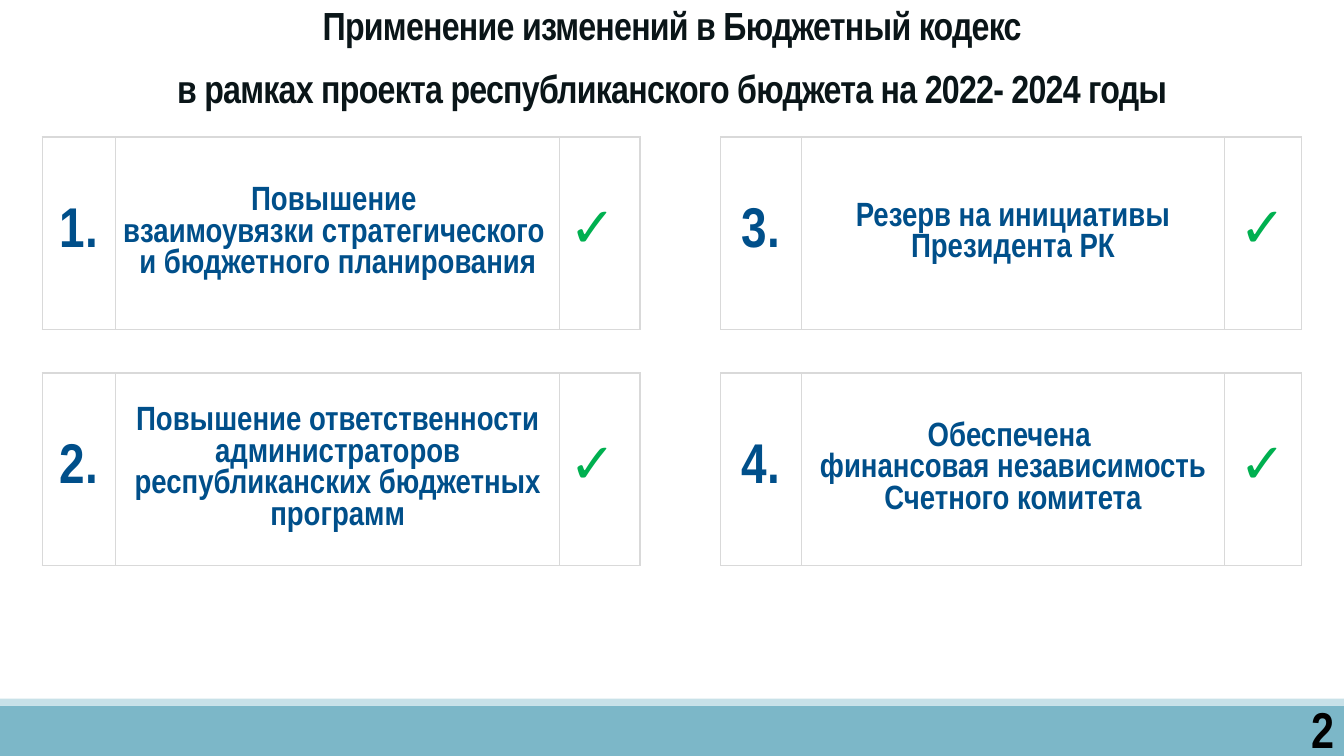
from dataclasses import dataclass

from lxml import etree
from pptx import Presentation
from pptx.dml.color import RGBColor
from pptx.enum import shapes, text
from pptx.oxml import ns
from pptx.util import Pt


@dataclass(frozen=True)
class Theme:
    """Colours, font and type sizes of the slide."""
    font: str = "Arial Narrow"
    title: str = "0A1518"
    body: str = "004F8A"
    check: str = "00B050"
    page_number: str = "000000"
    border: str = "D9D9D9"
    footer: str = "7CB7C8"
    stripe: str = "C8E1E8"
    title_size: int = 28
    body_size: int = 24
    number_size: int = 40
    check_size: int = 40
    page_size: int = 36


THEME = Theme()
WIDTH, HEIGHT = 960, 540
COLUMNS = (52.6, 316.8, 57.6, 57.6, 57.6, 302.4, 54.7)
ROWS = (137.5, 31, 137.5)
GAP_ROW, GAP_COLUMN = 1, 3
TITLE = (
    "Применение изменений в Бюджетный кодекс",
    "в рамках проекта республиканского бюджета на 2022- 2024 годы",
)
CARDS = (
    (0, 0, "1.", ("Повышение ", "взаимоувязки стратегического ",
                  "и бюджетного планирования")),
    (2, 0, "2.", ("Повышение ответственности администраторов "
                  "республиканских бюджетных программ",)),
    (0, 4, "3.", ("Резерв на инициативы Президента РК",)),
    (2, 4, "4.", ("Обеспечена ", "финансовая независимость Счетного комитета")),
)


def write(frame, lines, size, color, bold=True, align=text.PP_ALIGN.CENTER):
    """Fill a text frame with one formatted paragraph per line."""
    frame.word_wrap = True
    for index, line in enumerate(lines):
        para = frame.add_paragraph() if index else frame.paragraphs[0]
        para.alignment = align
        span = para.add_run()
        span.text = line
        span.font.name = THEME.font
        span.font.size = Pt(size)
        span.font.bold = bold
        span.font.color.rgb = RGBColor.from_string(color)


def add_band(page, top, height, color):
    """Draw a full-width band without an outline."""
    band = page.shapes.add_shape(
        shapes.MSO_SHAPE.RECTANGLE, 0, Pt(top), Pt(WIDTH), Pt(height))
    band.shadow.inherit = False
    band.fill.solid()
    band.fill.fore_color.rgb = RGBColor.from_string(color)
    band.line.fill.background()


def add_title(page):
    """Format the title placeholder."""
    box = page.shapes.title
    box.left, box.top, box.width, box.height = 0, Pt(5), Pt(WIDTH), Pt(67.7)
    frame = box.text_frame
    frame.auto_size = text.MSO_AUTO_SIZE.NONE
    frame.vertical_anchor = text.MSO_ANCHOR.MIDDLE
    write(frame, TITLE, THEME.title_size, THEME.title)
    for para in frame.paragraphs:
        para.line_spacing = 1.1
        para.space_before = Pt(8)
        for span in para.runs:
            span.font._element.set("spc", "-50")


def add_page_number(page):
    """Place the page number in the footer."""
    box = page.shapes.add_textbox(Pt(856.8), Pt(506.2), Pt(103.2), Pt(28.8))
    box.text_frame.vertical_anchor = text.MSO_ANCHOR.MIDDLE
    write(box.text_frame, ["2"], THEME.page_size, THEME.page_number,
          align=text.PP_ALIGN.RIGHT)


def set_borders(cell, visible):
    """Draw the named sides of a cell and clear the others."""
    properties = cell._tc.get_or_add_tcPr()
    for index, side in enumerate("LRTB"):
        line = etree.Element(ns.qn(f"a:ln{side}"), w=str(Pt(1)))
        if side in visible:
            fill = etree.SubElement(line, ns.qn("a:solidFill"))
            etree.SubElement(fill, ns.qn("a:srgbClr"), val=THEME.border)
        else:
            etree.SubElement(line, ns.qn("a:noFill"))
        properties.insert(index, line)


def add_cards(page):
    """Build the table of numbered cards with check marks."""
    table = page.shapes.add_table(
        len(ROWS), len(COLUMNS), Pt(30.2), Pt(97.9),
        Pt(sum(COLUMNS)), Pt(sum(ROWS))).table
    table.first_row = table.horz_banding = False
    for column, width in zip(table.columns, COLUMNS):
        column.width = Pt(width)
    for row, height in zip(table.rows, ROWS):
        row.height = Pt(height)
    for r in range(len(ROWS)):
        for c in range(len(COLUMNS)):
            cell = table.cell(r, c)
            cell.fill.background()
            cell.vertical_anchor = text.MSO_ANCHOR.MIDDLE
            cell.margin_left = cell.margin_right = Pt(5)
            sides = "" if c == GAP_COLUMN else "TB"
            set_borders(cell, sides if r == GAP_ROW else
                        "LR" if c == GAP_COLUMN else "LRTB")
    for r, c, number, lines in CARDS:
        write(table.cell(r, c).text_frame, [number],
              THEME.number_size, THEME.body)
        write(table.cell(r, c + 1).text_frame, lines,
              THEME.body_size, THEME.body)
        write(table.cell(r, c + 2).text_frame, ["✓"],
              THEME.check_size, THEME.check, bold=False)
        if c < GAP_COLUMN:
            table.cell(r, c + 2).margin_right = Pt(15)


def main():
    """Build and save the slide."""
    deck = Presentation()
    deck.slide_width, deck.slide_height = Pt(WIDTH), Pt(HEIGHT)
    page = deck.slides.add_slide(deck.slide_layouts.get_by_name("Title Only"))
    add_band(page, 504, 36, THEME.footer)
    add_band(page, 499, 5, THEME.stripe)
    add_page_number(page)
    add_title(page)
    add_cards(page)
    deck.save("out.pptx")


if __name__ == "__main__":
    main()
